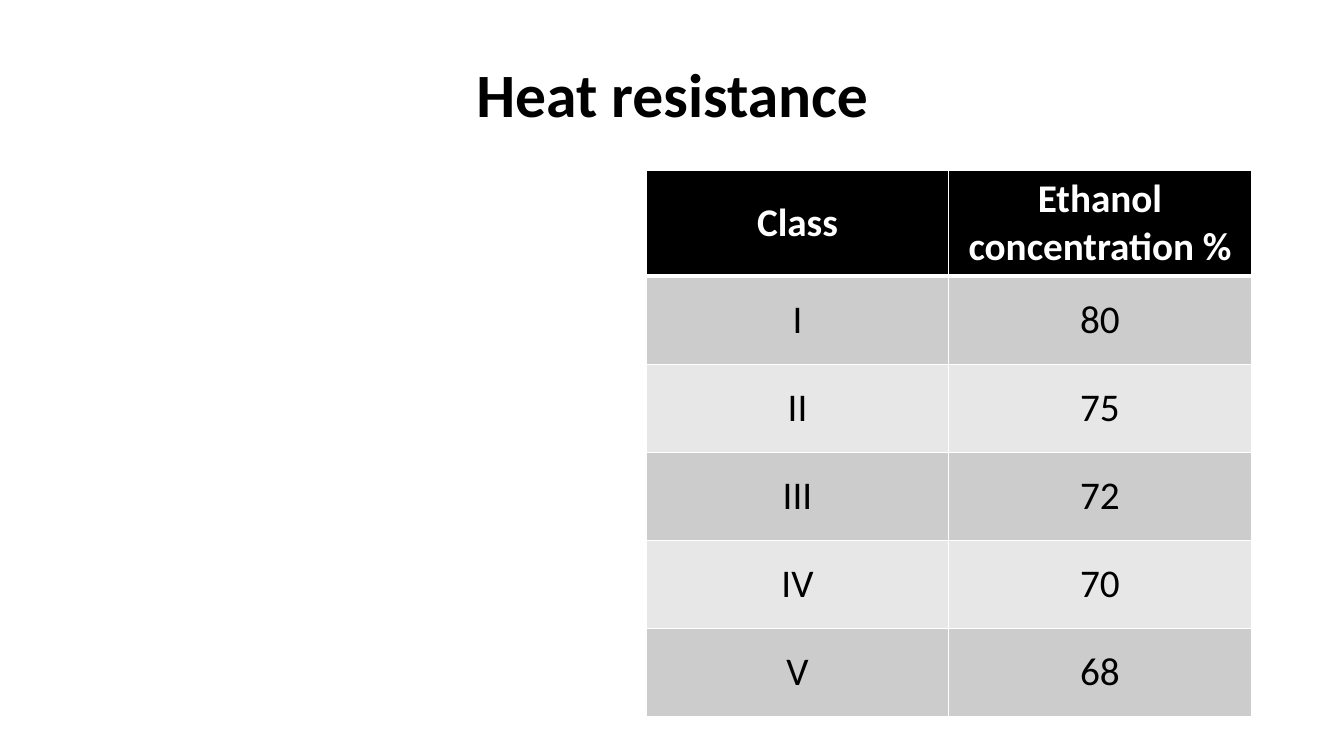
from lxml import etree
from pptx import Presentation
from pptx.dml.color import RGBColor
from pptx.enum.text import MSO_ANCHOR, PP_ALIGN
from pptx.oxml.ns import qn
from pptx.util import Inches, Pt

CENTER = PP_ALIGN.CENTER
MIDDLE = MSO_ANCHOR.MIDDLE
BLACK = RGBColor(0x00, 0x00, 0x00)
WHITE = RGBColor(0xFF, 0xFF, 0xFF)
DARK_BAND = RGBColor(0xCC, 0xCC, 0xCC)
LIGHT_BAND = RGBColor(0xE7, 0xE7, 0xE7)

ETHANOL_BY_CLASS = [
    ("Class", "Ethanol concentration %"),
    ("I", "80"),
    ("II", "75"),
    ("III", "72"),
    ("IV", "70"),
    ("V", "68"),
]
COLUMN_WIDTH = 3
HEADER_HEIGHT = 1.04
BODY_HEIGHT = 4.37


def write_text(frame, text, size, color=BLACK, bold=False):
    paragraph = frame.paragraphs[0]
    paragraph.alignment = CENTER
    run = paragraph.add_run()
    run.text = text
    run.font.name = "Calibri"
    run.font.size = Pt(size)
    run.font.bold = bold
    run.font.color.rgb = color


def add_borders(cell, **widths):
    """Draw white cell borders; widths maps lnL, lnR, lnT and lnB to points."""
    properties = cell._tc.get_or_add_tcPr()
    for position, (side, width) in enumerate(widths.items()):
        line = etree.Element(qn(f"a:{side}"), w=str(Pt(width)))
        fill = etree.SubElement(line, qn("a:solidFill"))
        etree.SubElement(fill, qn("a:srgbClr"), val=str(WHITE))
        properties.insert(position, line)


presentation = Presentation()
presentation.slide_width = Inches(13.33)
presentation.slide_height = Inches(7.5)
title_only = presentation.slide_layouts[5]
slide = presentation.slides.add_slide(title_only)

title = slide.shapes.title
title.left, title.top = Inches(0.67), Inches(0.3)
title.width, title.height = Inches(12), Inches(1.25)
title.text_frame.vertical_anchor = MIDDLE
write_text(title.text_frame, "Heat resistance", 44, bold=True)

row_count, column_count = len(ETHANOL_BY_CLASS), len(ETHANOL_BY_CLASS[0])
resistance = slide.shapes.add_table(
    row_count, column_count, Inches(6.41), Inches(1.69),
    Inches(COLUMN_WIDTH * column_count), Inches(HEADER_HEIGHT + BODY_HEIGHT),
).table

for column in resistance.columns:
    column.width = Inches(COLUMN_WIDTH)

for index, values in enumerate(ETHANOL_BY_CLASS):
    is_header = index == 0
    if is_header:
        height, background, color = HEADER_HEIGHT, BLACK, WHITE
    else:
        height = BODY_HEIGHT / (row_count - 1)
        background = DARK_BAND if index % 2 else LIGHT_BAND
        color = BLACK
    resistance.rows[index].height = Inches(height)
    for column_index, value in enumerate(values):
        cell = resistance.cell(index, column_index)
        cell.vertical_anchor = MIDDLE
        cell.fill.solid()
        cell.fill.fore_color.rgb = background
        write_text(cell.text_frame, value, 28, color=color, bold=is_header)
        add_borders(cell, lnL=1, lnR=1, lnT=3 if index == 1 else 1,
                    lnB=3 if is_header else 1)

presentation.save("out.pptx")
